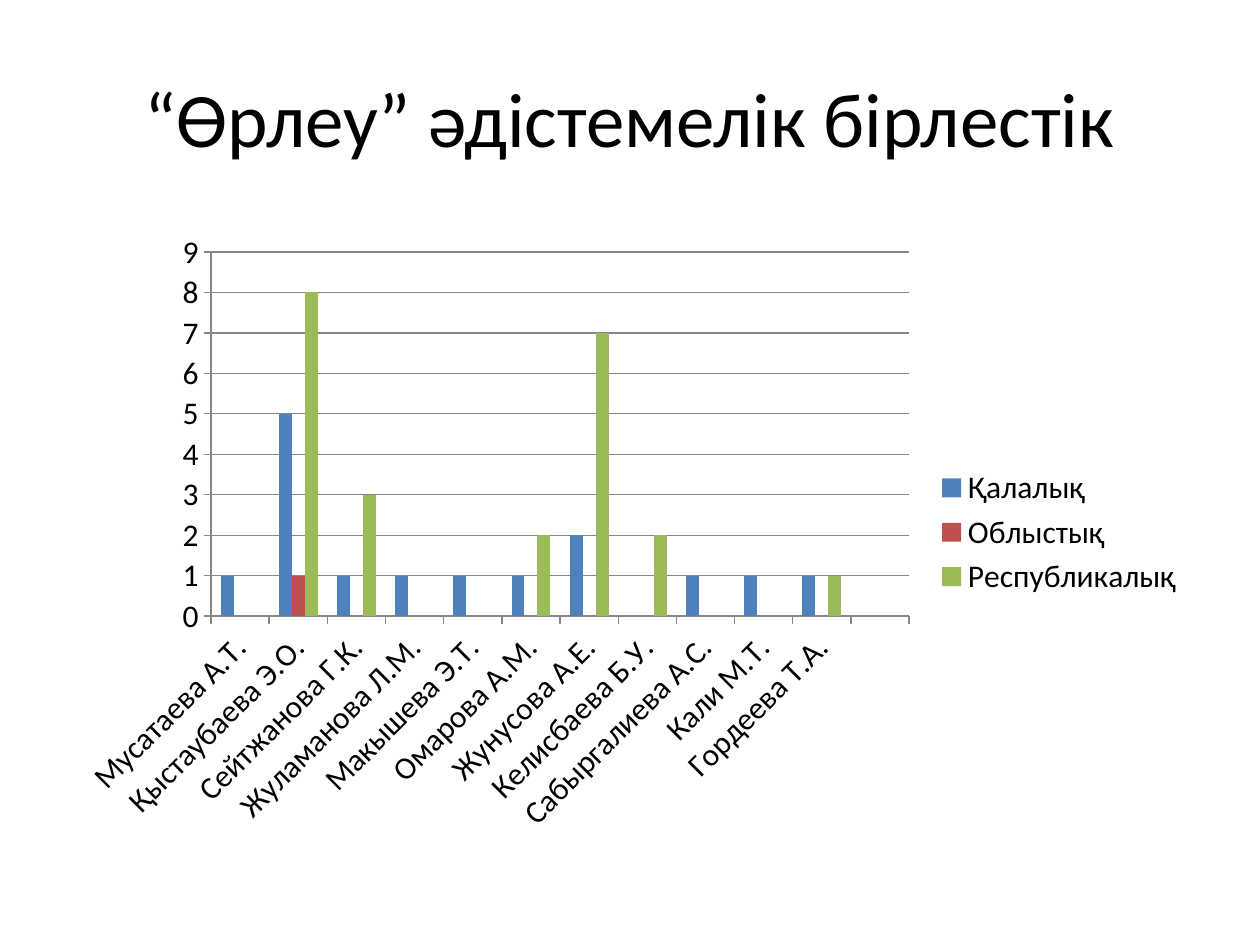
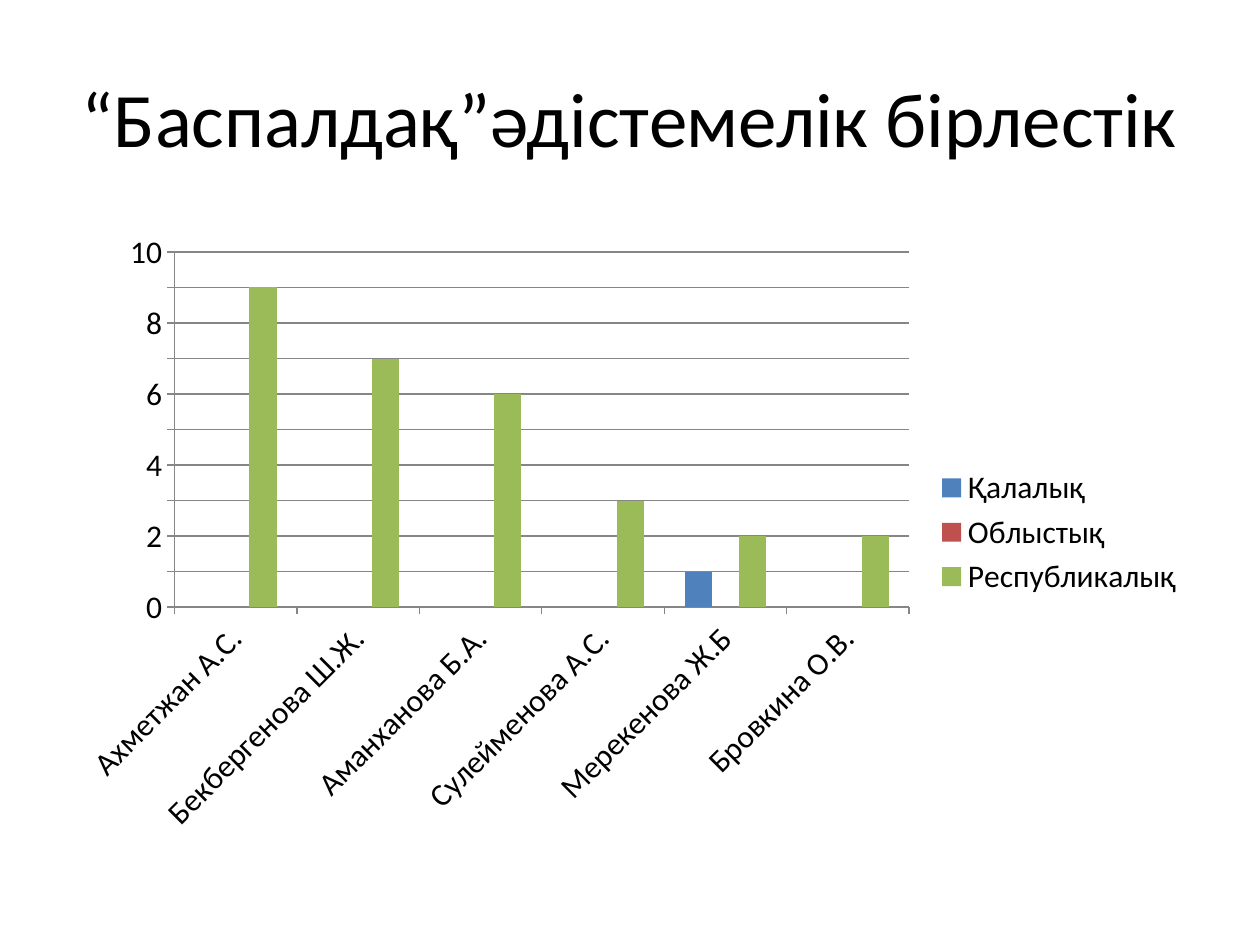
from pptx import Presentation
from pptx.chart.data import CategoryChartData
from pptx.dml.color import RGBColor
from pptx.enum.chart import XL_CHART_TYPE, XL_LEGEND_POSITION, XL_TICK_MARK
from pptx.enum.text import MSO_ANCHOR, PP_ALIGN
from pptx.util import Inches, Pt

CLUSTERED = XL_CHART_TYPE.COLUMN_CLUSTERED
LEGEND_RIGHT = XL_LEGEND_POSITION.RIGHT
TICK_OUTSIDE = XL_TICK_MARK.OUTSIDE
MIDDLE = MSO_ANCHOR.MIDDLE
CENTER = PP_ALIGN.CENTER

FONT = "Calibri"
COLORS = {"text": "000000", "background": "FFFFFF", "axis": "868686"}
LEVELS = {"Қалалық": "4F81BD", "Облыстық": "C0504D", "Республикалық": "9BBB59"}

SLIDE_WIDTH, SLIDE_HEIGHT = Inches(10), Inches(7.5)
HEADING_BOX = (0.05, 0.04, 0.9, 1 / 6)
RESULTS_BOX = (0.05, 7 / 30, 0.9, 0.66)

ASSOCIATIONS = [
    ("“Өрлеу” әдістемелік бірлестік", [
        ("Мусатаева А.Т.", 1, None, None),
        ("Қыстаубаева Э.О.", 5, 1, 8),
        ("Сейтжанова Г.К.", 1, None, 3),
        ("Жуламанова Л.М.", 1, None, None),
        ("Макышева Э.Т.", 1, None, None),
        ("Омарова А.М.", 1, None, 2),
        ("Жунусова А.Е.", 2, None, 7),
        ("Келисбаева Б.У.", None, None, 2),
        ("Сабыргалиева А.С.", 1, None, None),
        ("Кали М.Т.", 1, None, None),
        ("Гордеева Т.А.", 1, None, 1),
        ("", None, None, None),
    ]),
    ("“Баспалдақ”әдістемелік бірлестік", [
        ("Ахметжан А.С.", None, None, 9),
        ("Бекбергенова Ш.Ж.", None, None, 7),
        ("Аманханова Б.А.", None, None, 6),
        ("Сулейменова А.С.", None, None, 3),
        ("Мерекенова Ж.Б", 1, None, 2),
        ("Бровкина О.В.", None, None, 2),
    ]),
]


def rgb(name):
    return RGBColor.from_string(COLORS[name])


def to_slide(box):
    left, top, width, height = box
    return (round(left * SLIDE_WIDTH), round(top * SLIDE_HEIGHT),
            round(width * SLIDE_WIDTH), round(height * SLIDE_HEIGHT))


def style_font(font, size):
    font.name = FONT
    font.size = Pt(size)
    font.color.rgb = rgb("text")


def place_heading(slide, box, wording):
    heading = slide.shapes.title
    heading.left, heading.top, heading.width, heading.height = to_slide(box)
    frame = heading.text_frame
    frame.text = wording
    frame.vertical_anchor = MIDDLE
    paragraph = frame.paragraphs[0]
    paragraph.alignment = CENTER
    style_font(paragraph.runs[0].font, 44)


def style_line(line):
    line.color.rgb = rgb("axis")
    line.width = Pt(0.75)


def style_axes(chart, highest):
    names, counts = chart.category_axis, chart.value_axis
    for axis in (names, counts):
        axis.major_tick_mark = TICK_OUTSIDE
        style_line(axis.format.line)
        style_font(axis.tick_labels.font, 18)
    names._element.txPr.bodyPr.set("rot", str(-45 * 60000))
    counts.minimum_scale = 0
    counts.maximum_scale = highest + 1
    counts.major_unit = 1
    counts.has_major_gridlines = True
    style_line(counts.major_gridlines.format.line)


def place_results(slide, box, teachers):
    names, *results = zip(*teachers)
    data = CategoryChartData()
    data.categories = names
    for level, counts in zip(LEVELS, results):
        data.add_series(level, counts)
    chart = slide.shapes.add_chart(CLUSTERED, *to_slide(box), data).chart
    chart.has_title = False
    style_font(chart.font, 18)
    chart.has_legend = True
    chart.legend.position = LEGEND_RIGHT
    chart.legend.include_in_layout = False
    style_font(chart.legend.font, 18)
    columns = chart.plots[0]
    columns.gap_width = 150
    columns.overlap = 0
    columns.vary_by_categories = False
    for series in columns.series:
        series.format.fill.solid()
        series.format.fill.fore_color.rgb = RGBColor.from_string(LEVELS[series.name])
    style_axes(chart, max(count or 0 for counts in results for count in counts))


def build_association(deck, heading, teachers):
    slide = deck.slides.add_slide(deck.slide_layouts.get_by_name("Title Only"))
    slide.background.fill.solid()
    slide.background.fill.fore_color.rgb = rgb("background")
    place_heading(slide, HEADING_BOX, heading)
    place_results(slide, RESULTS_BOX, teachers)


def main():
    deck = Presentation()
    deck.slide_width, deck.slide_height = SLIDE_WIDTH, SLIDE_HEIGHT
    for heading, teachers in ASSOCIATIONS:
        build_association(deck, heading, teachers)
    deck.save("out.pptx")


if __name__ == "__main__":
    main()
